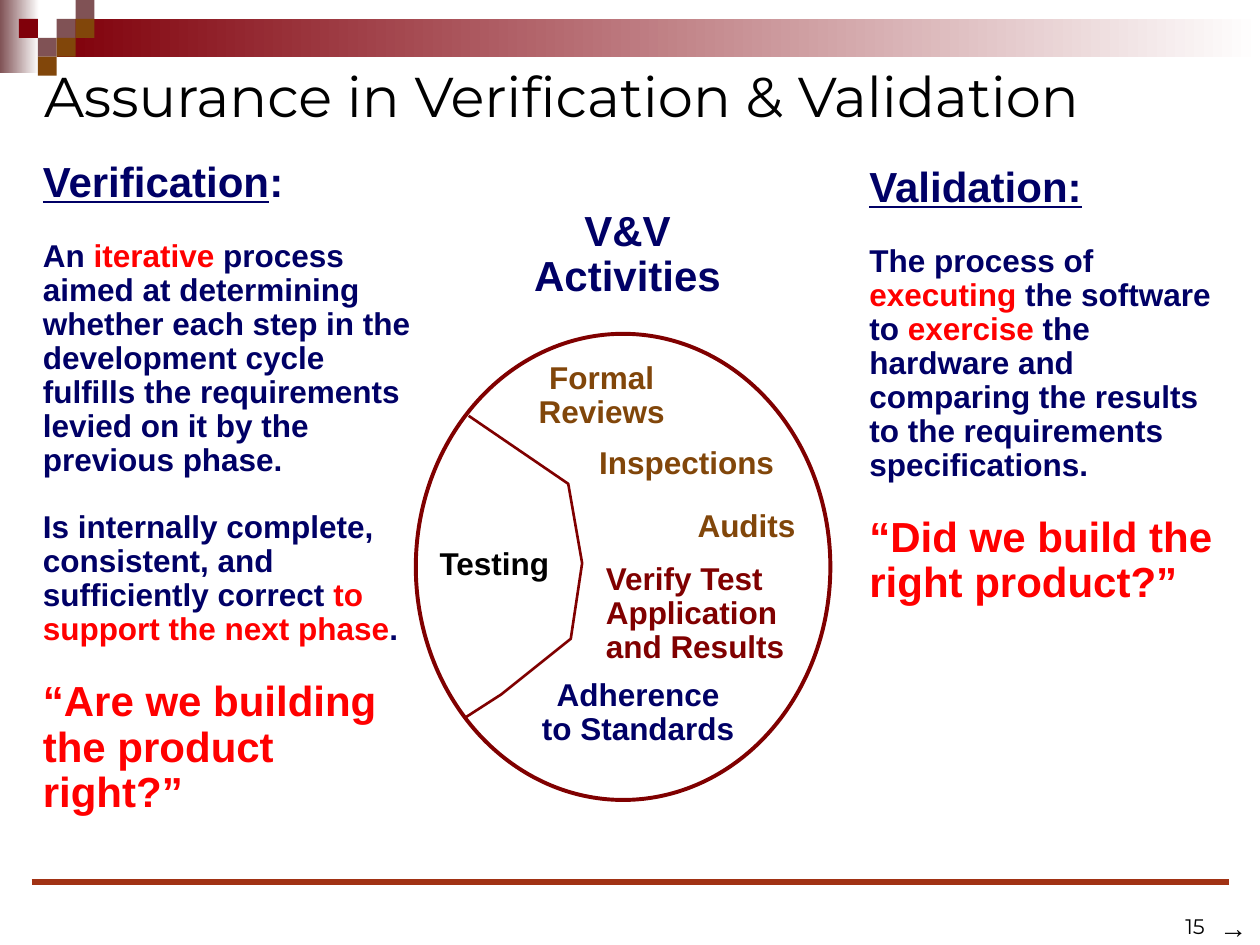
from dataclasses import dataclass
from typing import NamedTuple

import lxml.etree
import pptx
import pptx.dml.color
import pptx.enum.shapes
import pptx.enum.text
import pptx.oxml.ns
import pptx.util

ALIGN = pptx.enum.text.PP_ALIGN
ANCHOR = pptx.enum.text.MSO_ANCHOR
SHAPE = pptx.enum.shapes.MSO_SHAPE


@dataclass(frozen=True)
class Theme:
    navy: str = "000066"
    red: str = "FF0000"
    maroon: str = "800000"
    wine: str = "80000A"
    mauve: str = "805255"
    brown: str = "81460A"
    rust: str = "A13214"
    black: str = "000000"
    white: str = "FFFFFF"
    text_face: str = "Arial"
    title_face: str = "Montserrat"
    title_size: int = 32
    heading_size: int = 24
    text_size: int = 18
    arrow_size: int = 16
    number_size: int = 12
    line_spacing: float = 0.9
    paragraph_gap: int = 19


class Area(NamedTuple):
    """Percent of the slide's width and height."""
    left: float
    top: float
    width: float
    height: float


class Run(NamedTuple):
    text: str
    color: str
    underline: bool = False


class Passage(NamedTuple):
    runs: list[Run]
    size: int


class Label(NamedTuple):
    lines: list[str]
    area: Area
    color: str
    size: int
    align: ALIGN = ALIGN.CENTER


THEME = Theme()
MOSAIC_COLUMN, MOSAIC_ROW = 1.5, 2

MOSAIC = [
    (3, 1, THEME.mauve), (4, 0, THEME.mauve), (4, 1, THEME.brown),
    (2, 2, THEME.mauve), (1, 1, THEME.wine), (3, 2, THEME.brown),
    (2, 3, THEME.brown),
]
BANDS = [
    (Area(0, 0, 3.1, 7.73), THEME.mauve),
    (Area(4.5, 2, 95.5, 4), THEME.wine),
]
LABELS = [
    Label(["V&V", "Activities"], Area(41.4, 21.6, 16.8, 10.93), THEME.navy, THEME.heading_size),
    Label(["Testing"], Area(33.9, 57.33, 10.9, 4.93), THEME.black, THEME.text_size, ALIGN.LEFT),
    Label(["Formal", "Reviews"], Area(41.7, 37.73, 12.1, 8.67), THEME.brown, THEME.text_size),
    Label(["Inspections"], Area(46.5, 46.67, 16, 5.07), THEME.brown, THEME.text_size),
    Label(["Audits"], Area(54.3, 53.33, 9.9, 5.07), THEME.brown, THEME.text_size),
    Label(["Verify Test", "Application", "and Results"], Area(47.1, 58.93, 16.2, 12.13),
          THEME.maroon, THEME.text_size, ALIGN.LEFT),
    Label(["Adherence", "to Standards"], Area(42, 71.2, 17.3, 8.53), THEME.navy, THEME.text_size),
]
TESTING_EDGE = [(37.2, 44), (45.1, 51.2), (46.2, 59.6), (45.3, 67.6), (39.8, 73.47), (37, 75.87)]
VERIFICATION = [
    Passage([Run("Verification", THEME.navy, True), Run(":", THEME.navy)], THEME.heading_size),
    Passage([
        Run("An ", THEME.navy), Run("iterative", THEME.red),
        Run(" process aimed at determining whether each step in the development cycle "
            "fulfills the requirements levied on it by the previous phase.", THEME.navy),
    ], THEME.text_size),
    Passage([
        Run("Is internally complete, consistent, and sufficiently correct ", THEME.navy),
        Run("to support the next phase", THEME.red), Run(".", THEME.navy),
    ], THEME.text_size),
    Passage([Run("“Are we building the product right?”", THEME.red)], THEME.heading_size),
]
VALIDATION = [
    Passage([Run("Validation:", THEME.navy, True)], THEME.heading_size),
    Passage([
        Run("The process of ", THEME.navy), Run("executing", THEME.red),
        Run(" the software to ", THEME.navy), Run("exercise", THEME.red),
        Run(" the hardware and comparing the results to the requirements specifications.",
            THEME.navy),
    ], THEME.text_size),
    Passage([Run("“Did we build the right product?”", THEME.red)], THEME.heading_size),
]

deck = pptx.Presentation()
deck.slide_width, deck.slide_height = pptx.util.Inches(10), pptx.util.Inches(7.5)
slide = deck.slides.add_slide(deck.slide_layouts.get_by_name("Two Content"))


def rgb(color: str) -> pptx.dml.color.RGBColor:
    return pptx.dml.color.RGBColor.from_string(color)


def across(share: float) -> int:
    return round(deck.slide_width * share / 100)


def down(share: float) -> int:
    return round(deck.slide_height * share / 100)


def measure(area: Area) -> tuple[int, int, int, int]:
    return across(area.left), down(area.top), across(area.width), down(area.height)


def style(font, size: int, color: str | None = None, face: str = THEME.text_face,
          bold: bool = True) -> None:
    font.name, font.size, font.bold = face, pptx.util.Pt(size), bold
    if color:
        font.color.rgb = rgb(color)


def outline(shape, color: str, width: float) -> None:
    shape.shadow.inherit = False
    shape.fill.background()
    shape.line.color.rgb, shape.line.width = rgb(color), pptx.util.Pt(width)


def draw_block(area: Area, color: str, fades: bool = False) -> None:
    block = slide.shapes.add_shape(SHAPE.RECTANGLE, *measure(area))
    block.shadow.inherit = False
    block.line.fill.background()
    if fades:
        block.fill.gradient()
        block.fill.gradient_angle = 0
        for stop, shade in zip(block.fill.gradient_stops, (color, THEME.white)):
            stop.color.rgb = rgb(shade)
    else:
        block.fill.solid()
        block.fill.fore_color.rgb = rgb(color)


def place(holder, area: Area) -> None:
    holder.left, holder.top, holder.width, holder.height = measure(area)
    holder.text_frame.auto_size = pptx.enum.text.MSO_AUTO_SIZE.NONE


def write_definition(holder, area: Area, passages: list[Passage]) -> None:
    place(holder, area)
    for index, passage in enumerate(passages):
        frame = holder.text_frame
        paragraph = frame.add_paragraph() if index else frame.paragraphs[0]
        paragraph.line_spacing = THEME.line_spacing
        paragraph.space_before = pptx.util.Pt(THEME.paragraph_gap if index else 0)
        properties = paragraph._p.get_or_add_pPr()
        properties.set("marL", "0")
        properties.set("indent", "0")
        lxml.etree.SubElement(properties, pptx.oxml.ns.qn("a:buNone"))
        style(paragraph.font, passage.size)
        for part in passage.runs:
            run = paragraph.add_run()
            run.text = part.text
            run.font.color.rgb = rgb(part.color)
            if part.underline:
                run.font.underline = True


def write_label(label: Label) -> None:
    frame = slide.shapes.add_textbox(*measure(label.area)).text_frame
    frame.word_wrap = False
    frame.auto_size = pptx.enum.text.MSO_AUTO_SIZE.SHAPE_TO_FIT_TEXT
    for index, line in enumerate(label.lines):
        paragraph = frame.add_paragraph() if index else frame.paragraphs[0]
        paragraph.text, paragraph.alignment = line, label.align
        paragraph.line_spacing = THEME.line_spacing
        style(paragraph.font, label.size, label.color)


def write_footer(text: str, area: Area, size: int, face: str, align: ALIGN) -> None:
    frame = slide.shapes.add_textbox(*measure(area)).text_frame
    frame.word_wrap, frame.vertical_anchor = True, ANCHOR.BOTTOM
    paragraph = frame.paragraphs[0]
    paragraph.text, paragraph.alignment = text, align
    style(paragraph.font, size, THEME.black, face, bold=False)


for band, color in BANDS:
    draw_block(band, color, fades=True)
for column, row, color in MOSAIC:
    draw_block(Area(column * MOSAIC_COLUMN, row * MOSAIC_ROW, MOSAIC_COLUMN, MOSAIC_ROW), color)

footer_rule = slide.shapes.add_connector(
    pptx.enum.shapes.MSO_CONNECTOR.STRAIGHT, across(2.5), down(93.33), across(97.5), down(93.33))
footer_rule.line.color.rgb, footer_rule.line.width = rgb(THEME.rust), pptx.util.Pt(3)
lxml.etree.SubElement(footer_rule._element.spPr, pptx.oxml.ns.qn("a:effectLst"))

title, verification, validation = slide.placeholders
place(title, Area(2.5, 5.6, 97.5, 8.93))
title.text_frame.vertical_anchor = ANCHOR.MIDDLE
heading = title.text_frame.paragraphs[0]
heading.text, heading.alignment = "Assurance in Verification & Validation", ALIGN.LEFT
style(heading.font, THEME.title_size, THEME.black, THEME.title_face, bold=False)

activities = slide.shapes.add_shape(SHAPE.OVAL, *measure(Area(33, 35.33, 32.9, 49.33)))
outline(activities, THEME.maroon, 2.25)
edge = [(across(x), down(y)) for x, y in TESTING_EDGE]
edge_builder = slide.shapes.build_freeform(*edge[0], scale=1.0)
edge_builder.add_line_segments(edge[1:], close=False)
outline(edge_builder.convert_to_shape(), THEME.maroon, 1.5)

for activity in LABELS:
    write_label(activity)
write_definition(verification, Area(2.4, 16.4, 31.7, 71.73), VERIFICATION)
write_definition(validation, Area(68, 16.93, 30.3, 51.87), VALIDATION)
write_footer("15", Area(73.3, 93.33, 23.3, 6.67), THEME.number_size, THEME.title_face, ALIGN.RIGHT)
write_footer("→", Area(95.8, 95.6, 4.2, 4.93), THEME.arrow_size, THEME.text_face, ALIGN.LEFT)

deck.save("out.pptx")
